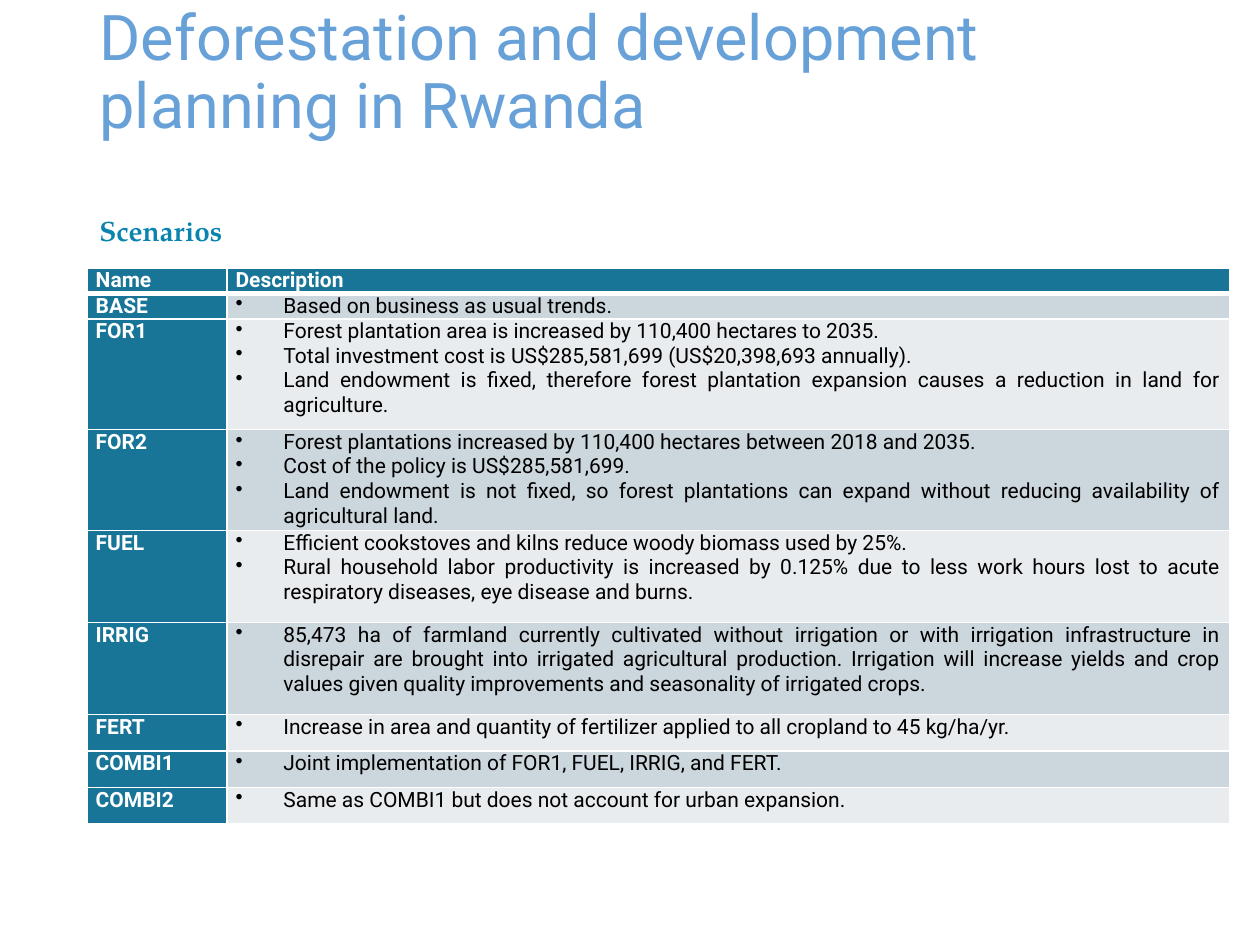
from pptx import Presentation
from pptx.dml.color import RGBColor
from pptx.enum.text import MSO_ANCHOR, PP_ALIGN
from pptx.oxml.ns import qn
from pptx.util import Inches, Pt
from lxml import etree

BOTTOM, TOP = MSO_ANCHOR.BOTTOM, MSO_ANCHOR.TOP
LEFT, JUSTIFY = PP_ALIGN.LEFT, PP_ALIGN.JUSTIFY

TITLE = "Deforestation and development planning in Rwanda"
SUBTITLE = "Scenarios"
HEADER = ("Name", "Description")
SCENARIOS = [
    ("BASE", 0.15, ["Based on business as usual trends."]),
    ("FOR1", 0.88, [
        "Forest plantation area is increased by 110,400 hectares to 2035.",
        "Total investment cost is US$285,581,699 (US$20,398,693 annually).",
        "Land endowment is fixed, therefore forest plantation expansion causes "
        "a reduction in land for agriculture."]),
    ("FOR2", 0.73, [
        "Forest plantations increased by 110,400 hectares between 2018 and 2035.",
        "Cost of the policy is US$285,581,699.",
        "Land endowment is not fixed, so forest plantations can expand without "
        "reducing availability of agricultural land."]),
    ("FUEL", 0.73, [
        "Efficient cookstoves and kilns reduce woody biomass used by 25%.",
        "Rural household labor productivity is increased by 0.125% due to less "
        "work hours lost to acute respiratory diseases, eye disease and burns."]),
    ("IRRIG", 0.73, [
        "85,473 ha of farmland currently cultivated without irrigation or with "
        "irrigation infrastructure in disrepair are brought into irrigated "
        "agricultural production. Irrigation will increase yields and crop values "
        "given quality improvements and seasonality of irrigated crops."]),
    ("FERT", 0.29, ["Increase in area and quantity of fertilizer applied to all "
                    "cropland to 45 kg/ha/yr."]),
    ("COMBI1", 0.29, ["Joint implementation of FOR1, FUEL, IRRIG, and FERT."]),
    ("COMBI2", 0.29, ["Same as COMBI1 but does not account for urban expansion."]),
]
COL_WIDTHS = (1.11, 7.96)
HEADER_HEIGHT = 0.15
MARGIN = 0.69
INDENT = 0.38
SANS, SERIF = "Roboto", "TeX Gyre Pagella"
WHITE, BLACK, TEAL = "FFFFFF", "000000", "197598"
BANDS = ("CCD6DD", "E8ECEF")


def rgb(value):
    """Turn a hex string into a colour."""
    return RGBColor.from_string(value)


def add_run(p, text, size, font, color, bold=False):
    """Append a formatted run to a paragraph."""
    r = p.add_run()
    r.text = text
    r.font.size, r.font.name, r.font.bold = Pt(size), font, bold
    r.font.color.rgb = rgb(color)


def add_bullet(p):
    """Give a paragraph a hanging bullet."""
    pPr = p._p.get_or_add_pPr()
    pPr.set("marL", str(Inches(INDENT)))
    pPr.set("indent", str(-Inches(INDENT)))
    etree.SubElement(pPr, qn("a:buChar"), char="•")


def add_borders(cell, top, bottom):
    """Draw white lines around a cell, with widths in points."""
    tcPr = cell._tc.get_or_add_tcPr()
    for side, width in (("L", 1), ("R", 1), ("T", top), ("B", bottom)):
        ln = etree.SubElement(tcPr, qn(f"a:ln{side}"), w=str(Pt(width)))
        fill = etree.SubElement(ln, qn("a:solidFill"))
        etree.SubElement(fill, qn("a:srgbClr"), val=WHITE)


def fill_cell(cell, row, lines, fill, color, bold, bullets):
    """Write and format one table cell."""
    add_borders(cell, 3 if row == 1 else 1, 3 if row == 0 else 1)
    cell.fill.solid()
    cell.fill.fore_color.rgb = rgb(fill)
    cell.margin_left = cell.margin_right = Inches(0.07)
    cell.margin_top = cell.margin_bottom = 0
    tf = cell.text_frame
    for i, line in enumerate(lines):
        p = tf.add_paragraph() if i else tf.paragraphs[0]
        p.alignment = JUSTIFY
        if bullets:
            add_bullet(p)
        add_run(p, line, 12, SANS, color, bold)


def add_heading(sp, box, anchor, spacing, text, *style):
    """Place a shape and write its single line of heading text."""
    sp.left, sp.top, sp.width, sp.height = (Inches(v) for v in box)
    tf = sp.text_frame
    tf.word_wrap = True
    tf.vertical_anchor = anchor
    p = tf.paragraphs[0]
    p.alignment, p.line_spacing, p.space_before = LEFT, spacing, Pt(0)
    add_run(p, text, *style)


def add_scenarios(s):
    """Build the scenario table."""
    heights = [HEADER_HEIGHT] + [height for _, height, _ in SCENARIOS]
    table = s.shapes.add_table(
        len(heights), len(COL_WIDTHS), Inches(MARGIN), Inches(2.13),
        Inches(sum(COL_WIDTHS)), Inches(sum(heights))).table
    for col, width in zip(table.columns, COL_WIDTHS):
        col.width = Inches(width)
    for row, height in zip(table.rows, heights):
        row.height = Inches(height)
    for c, text in enumerate(HEADER):
        fill_cell(table.cell(0, c), 0, [text], TEAL, WHITE, True, False)
    for i, (name, _, lines) in enumerate(SCENARIOS, 1):
        fill_cell(table.cell(i, 0), i, [name], TEAL, WHITE, True, False)
        fill_cell(table.cell(i, 1), i, lines, BANDS[(i - 1) % 2], BLACK, False, True)


def main():
    """Build and save the slide."""
    prs = Presentation()
    prs.slide_width, prs.slide_height = Inches(10), Inches(7.5)
    s = prs.slides.add_slide(prs.slide_layouts[5])
    add_heading(s.shapes.title, (MARGIN, 0.53, 7.5, 0.65), BOTTOM, 0.9,
                TITLE, 36, SANS, "68A1D7")
    add_heading(s.shapes.add_textbox(0, 0, 0, 0), (MARGIN, 1.62, 8.06, 3.62), TOP, 1.1,
                SUBTITLE, 16, SERIF, "0984AF", True)
    add_scenarios(s)
    prs.save("out.pptx")


if __name__ == "__main__":
    main()
